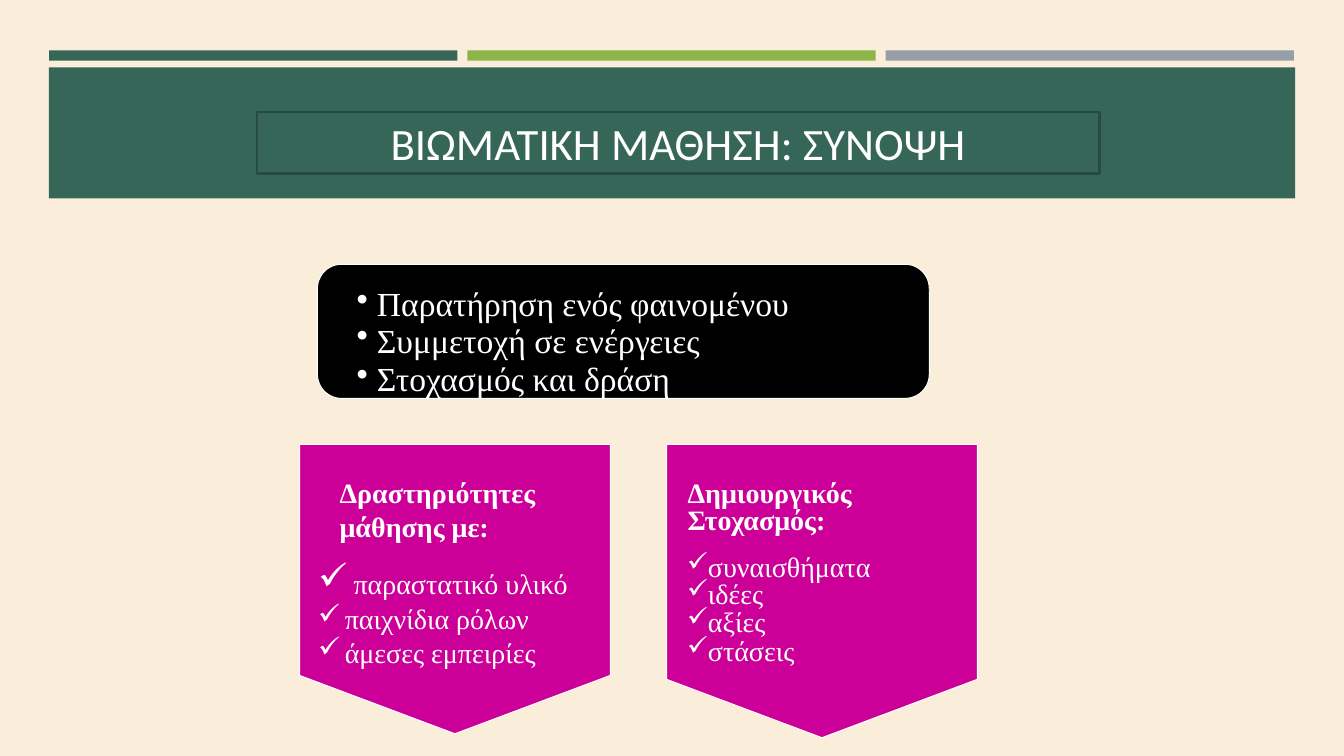
import pptx
import pptx.dml.color
import pptx.enum.shapes
import pptx.enum.text
import pptx.oxml.ns
import pptx.util
from lxml import etree

Cm, Pt = pptx.util.Cm, pptx.util.Pt
MSO_SHAPE = pptx.enum.shapes.MSO_SHAPE

COLORS = {
    "cream": "FAEEDA", "green": "366658", "dark green": "284B41", "lime": "8CB64A",
    "grey": "969FA7", "magenta": "CC0099", "black": "000000", "white": "FFFFFF",
}
SERIF = "Times New Roman"


def rgb(name):
    return pptx.dml.color.RGBColor.from_string(COLORS[name])


def style_shape(sp, fill, line=None, width=0.72):
    sp.shadow.inherit = False
    sp.fill.solid()
    sp.fill.fore_color.rgb = rgb(fill)
    if line:
        sp.line.color.rgb = rgb(line)
        sp.line.width = Pt(width)
    else:
        sp.line.fill.background()


def add_block(s, box, fill, line=None, width=0.72, kind=MSO_SHAPE.RECTANGLE):
    sp = s.shapes.add_shape(kind, *map(Cm, box))
    style_shape(sp, fill, line, width)
    return sp


def add_down_pentagon(s, left, top, width, side, height):
    """Rectangle with straight sides of length side and a point at the bottom."""
    right, shoulder = left + width, top + side
    outline = [(right, top), (right, shoulder), (left + width / 2, top + height), (left, shoulder)]
    builder = s.shapes.build_freeform(Cm(left), Cm(top))
    builder.add_line_segments([(Cm(x), Cm(y)) for x, y in outline])
    style_shape(builder.convert_to_shape(), "magenta", "white")


def set_font(p, size, name, bold=False):
    p.font.size = Pt(size)
    p.font.name = name
    p.font.bold = bold
    p.font.color.rgb = rgb("white")


def set_bullet(p, char, margin, percent):
    """Bullet hanging to the left of a text margin in centimetres."""
    pPr = p._p.get_or_add_pPr()
    pPr.set("marL", str(Cm(margin)))
    pPr.set("indent", str(-Cm(margin - 0.02)))

    def add(parent, tag, **attributes):
        return etree.SubElement(parent, pptx.oxml.ns.qn(tag), attributes)

    add(pPr, "a:buSzPct", val=str(percent * 1000))
    add(pPr, "a:buChar", char=char)
    add(add(pPr, "a:tabLst"), "a:tab", pos=str(Cm(margin)), algn="l")


def add_text(s, box, inset, size, paragraphs):
    """Each paragraph is a dict; one with no bullet is a bold heading."""
    tf = s.shapes.add_textbox(*map(Cm, box)).text_frame
    tf.word_wrap = True
    tf.auto_size = pptx.enum.text.MSO_AUTO_SIZE.SHAPE_TO_FIT_TEXT
    tf.margin_left = tf.margin_right = tf.margin_bottom = 0
    tf.margin_top = Cm(inset)
    for i, item in enumerate(paragraphs):
        p = tf.paragraphs[0] if i == 0 else tf.add_paragraph()
        p.add_run().text = item["text"]
        bullet = item.get("bullet")
        if bullet:
            set_bullet(p, bullet, item["margin"], item.get("percent", 100))
        else:
            p._p.get_or_add_pPr().set("marL", str(Cm(item["margin"])))
        if "line" in item:
            p.line_spacing = Pt(item["line"])
        if "before" in item:
            p.space_before = Pt(item["before"])
        set_font(p, size, SERIF, bold=not bullet)


def add_header(s):
    for i, color in enumerate(("green", "lime", "grey")):
        add_block(s, (1.24 + 10.54 * i, 1.27, 10.29, 0.26), color)
    add_block(s, (1.23, 1.7, 31.41, 3.3), "green")
    title = add_block(s, (6.48, 2.82, 21.23, 1.55), "green", "dark green", 1.75)
    tf = title.text_frame
    tf.vertical_anchor = pptx.enum.text.MSO_ANCHOR.MIDDLE
    p = tf.paragraphs[0]
    p.alignment = pptx.enum.text.PP_ALIGN.CENTER
    p.add_run().text = "ΒΙΩΜΑΤΙΚΗ ΜΑΘΗΣΗ: ΣΥΝΟΨΗ"
    set_font(p, 32, "Calibri")


def main():
    prs = pptx.Presentation()
    prs.slide_width, prs.slide_height = Cm(33.87), Cm(19.05)
    s = prs.slides.add_slide(prs.slide_layouts[6])
    s.background.fill.solid()
    s.background.fill.fore_color.rgb = rgb("cream")

    add_header(s)
    add_down_pentagon(s, 16.8, 11.2, 7.83, 5.92, 7.39)
    add_down_pentagon(s, 7.55, 11.2, 7.83, 5.82, 7.29)
    panel = add_block(s, (8, 6.66, 15.42, 3.38), "black", "white",
                      kind=MSO_SHAPE.ROUNDED_RECTANGLE)
    panel.adjustments[0] = 0.18

    dot = {"bullet": "•", "margin": 0.53}
    add_text(s, (8.97, 7.16, 12.98, 2.9), 0.03, 24, [
        {**dot, "text": "Παρατήρηση ενός φαινομένου", "line": 27.4},
        {**dot, "text": "Συμμετοχή σε ενέργειες", "line": 25.9},
        {**dot, "text": "Στοχασμός και δράση", "line": 27.4},
    ])

    check = {"bullet": "✓", "margin": 0.69}
    add_text(s, (8, 11.96, 7.65, 4.95), 0.03, 20, [
        {"text": "Δραστηριότητες μάθησης με:", "margin": 0.56},
        {"text": "παραστατικό υλικό", "bullet": "✓", "margin": 0.91, "percent": 133,
         "before": 16.6},
        {**check, "text": "παιχνίδια ρόλων", "before": 1.4},
        {**check, "text": "άμεσες εμπειρίες"},
    ])

    tight = {"bullet": "✓", "margin": 0.53, "percent": 94}
    add_text(s, (17.3, 12.01, 6.58, 4.85), 0.13, 20, [
        {"text": "Δημιουργικός Στοχασμός:", "margin": 0.03, "line": 19.4},
        {**tight, "text": "συναισθήματα", "line": 20.5, "before": 12.8},
        {**tight, "text": "ιδέες", "line": 19.4},
        {**tight, "text": "αξίες", "line": 20.5},
        {**tight, "text": "στάσεις", "line": 20.5},
    ])
    prs.save("out.pptx")


if __name__ == "__main__":
    main()
